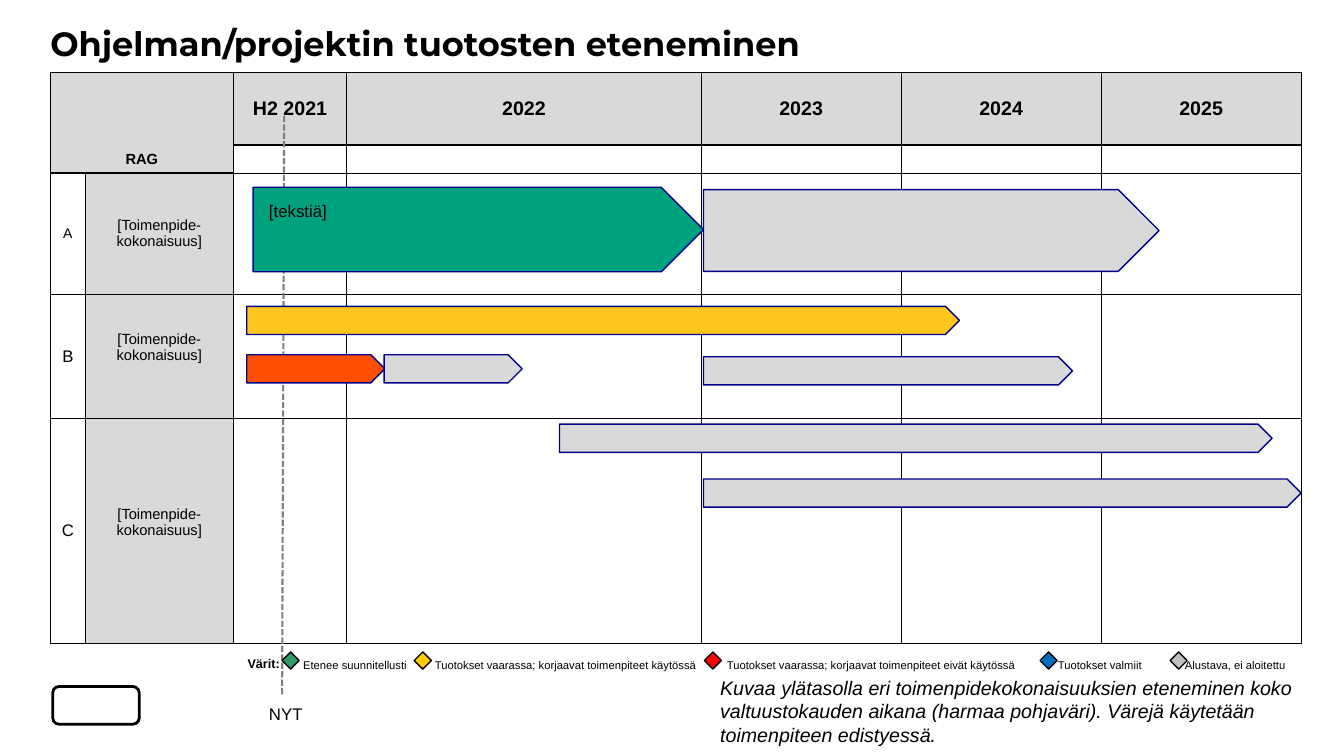
from dataclasses import dataclass

from lxml import etree
from pptx import Presentation
from pptx.dml.color import RGBColor
from pptx.enum.dml import MSO_LINE
from pptx.enum.shapes import MSO_CONNECTOR, MSO_SHAPE
from pptx.enum.text import MSO_ANCHOR, PP_ALIGN
from pptx.oxml.ns import qn
from pptx.util import Cm, Pt

LEFT, CENTER = PP_ALIGN.LEFT, PP_ALIGN.CENTER
TOP, MIDDLE, BOTTOM = MSO_ANCHOR.TOP, MSO_ANCHOR.MIDDLE, MSO_ANCHOR.BOTTOM
PENTAGON, DIAMOND = MSO_SHAPE.PENTAGON, MSO_SHAPE.DIAMOND
ROUNDED = MSO_SHAPE.ROUNDED_RECTANGLE
STRAIGHT = MSO_CONNECTOR.STRAIGHT
DASHED = MSO_LINE.SQUARE_DOT


@dataclass(frozen=True)
class Theme:
    title_font: str = "Montserrat"
    body_font: str = "Arial"
    ink: str = "000000"
    paper: str = "FFFFFF"
    grey: str = "D9D9D9"
    bar_line: str = "00008D"
    now_line: str = "808080"
    green: str = "00A17D"
    yellow: str = "FFC61E"
    red: str = "FD4F00"
    title: float = 24
    heading: float = 14
    body: float = 12
    small: float = 10.5
    row_a: float = 10
    legend_head: float = 9
    legend: float = 8


THEME = Theme()
BAR_HEIGHT = 0.71
COLUMNS = [0.88, 3.73, 2.86, 8.93, 5.04, 5.04, 5.04]
ROWS = [1.83, 0.65, 3.05, 3.14, 5.66]
PERIODS = ["H2 2021", "2022", "2023", "2024", "2025"]
ACTIONS = "[Toimenpide-kokonaisuus]"
# Row letter, its size, and the bottom margin of the neighbouring cell
GROUPS = [("A", THEME.row_a, 0.13), ("B", THEME.body, 0.58), ("C", THEME.body, 0.58)]
# Left, top, width, height, colour
BARS = [
    (6.38, 4.72, 11.35, 2.13, THEME.green),
    (17.73, 4.78, 11.48, 2.06, THEME.grey),
    (6.22, 7.72, 17.96, BAR_HEIGHT, THEME.yellow),
    (14.1, 10.69, 17.96, BAR_HEIGHT, THEME.grey),
    (6.22, 8.94, 3.48, BAR_HEIGHT, THEME.red),
    (9.68, 8.94, 3.48, BAR_HEIGHT, THEME.grey),
    (17.73, 8.99, 9.3, BAR_HEIGHT, THEME.grey),
    (17.73, 12.07, 15.06, BAR_HEIGHT, THEME.grey),
]
# Diamond left, label left, label width, colour, label
LEGEND = [
    (7.11, 7.64, 2.8, "339966", "Etenee suunnitellusti"),
    (10.44, 10.96, 6.8, "FFCC00", "Tuotokset vaarassa; korjaavat toimenpiteet käytössä"),
    (17.75, 18.32, 7.6, "FF0000", "Tuotokset vaarassa; korjaavat toimenpiteet eivät käytössä"),
    (26.21, 26.66, 2.5, "0070C0", "Tuotokset valmiit"),
    (29.49, 29.86, 3, "BFBFBF", "Alustava, ei aloitettu"),
]


def rgb(code):
    return RGBColor.from_string(code)


def write(frame, text, size, font=THEME.body_font, bold=False, italic=False,
          align=LEFT, spacing=None):
    para = frame.paragraphs[0]
    para.alignment = align
    if spacing:
        para.line_spacing = spacing
    span = para.add_run()
    span.text = text
    span.font.name, span.font.size = font, Pt(size)
    span.font.bold, span.font.italic = bold, italic
    span.font.color.rgb = rgb(THEME.ink)


def add_text(page, left, top, width, height, text, size,
             margins=(0.25, 0.13), anchor=TOP, **style):
    box = page.shapes.add_textbox(Cm(left), Cm(top), Cm(width), Cm(height))
    frame = box.text_frame
    frame.word_wrap = True
    frame.vertical_anchor = anchor
    frame.margin_left = frame.margin_right = Cm(margins[0])
    frame.margin_top = frame.margin_bottom = Cm(margins[1])
    write(frame, text, size, **style)


def add_block(page, kind, left, top, width, height, fill, line, weight=1):
    block = page.shapes.add_shape(kind, Cm(left), Cm(top), Cm(width), Cm(height))
    block.shadow.inherit = False
    block.fill.solid()
    block.fill.fore_color.rgb = rgb(fill)
    block.line.color.rgb = rgb(line)
    block.line.width = Pt(weight)


def set_borders(cell, row, column):
    """Draw the four sides; the edge below the heading is heavier."""
    properties = cell._tc.get_or_add_tcPr()
    sides = {"lnL": None, "lnR": None, "lnT": row, "lnB": row + 1}
    for position, (side, edge) in enumerate(sides.items()):
        heavy = edge == 1 or (edge == 2 and column < 2)
        line = etree.Element(qn(f"a:{side}"), w=str(Pt(2 if heavy else 1)))
        fill = etree.SubElement(line, qn("a:solidFill"))
        etree.SubElement(fill, qn("a:srgbClr"), val=THEME.ink)
        properties.insert(position, line)


def fill_cell(cell, text, size, bottom=0.13, anchor=MIDDLE, bold=False):
    cell.vertical_anchor = anchor
    cell.margin_bottom = Cm(bottom)
    write(cell.text_frame, text, size, bold=bold, align=CENTER)


def add_schedule(page):
    holder = page.shapes.add_table(len(ROWS), len(COLUMNS), Cm(1.27), Cm(1.83),
                                   Cm(sum(COLUMNS)), Cm(sum(ROWS)))
    table = holder.table
    table.first_row = table.horz_banding = False
    for column, width in zip(table.columns, COLUMNS):
        column.width = Cm(width)
    for row, height in zip(table.rows, ROWS):
        row.height = Cm(height)

    # Texts
    table.cell(0, 0).merge(table.cell(1, 1))
    fill_cell(table.cell(0, 0), "RAG", THEME.small, anchor=BOTTOM, bold=True)
    for column, period in enumerate(PERIODS, start=2):
        fill_cell(table.cell(0, column), period, THEME.heading, bold=True)
    for row, (letter, size, bottom) in enumerate(GROUPS, start=2):
        fill_cell(table.cell(row, 0), letter, size)
        fill_cell(table.cell(row, 1), ACTIONS, THEME.small, bottom)

    # Fills, borders and the type size of empty cells
    for row in range(len(ROWS)):
        for column in range(len(COLUMNS)):
            cell = table.cell(row, column)
            if row == 0 or column == 1 or cell.is_spanned:
                cell.fill.solid()
                cell.fill.fore_color.rgb = rgb(THEME.grey)
            else:
                cell.fill.background()
            set_borders(cell, row, column)
            if not cell.text:
                para = cell.text_frame.paragraphs[0]
                etree.SubElement(para._p, qn("a:endParaRPr"), sz=str(THEME.legend * 100))


def add_now_marker(page):
    line = page.shapes.add_connector(STRAIGHT, Cm(7.16), Cm(2.92), Cm(7.11), Cm(17.5))
    line.line.color.rgb = rgb(THEME.now_line)
    line.line.width = Pt(1.5)
    line.line.dash_style = DASHED
    etree.SubElement(line._element.spPr, qn("a:effectLst"))
    add_text(page, 6.53, 17.6, 2.01, 0.76, "NYT", THEME.body)


def add_legend(page):
    style = {"margins": (0, 0), "anchor": MIDDLE}
    add_text(page, 6.24, 16.4, 0.95, 0.66, "Värit:", THEME.legend_head, bold=True, **style)
    for diamond_left, left, width, colour, label in LEGEND:
        add_block(page, DIAMOND, diamond_left, 16.43, 0.43, 0.43, colour, THEME.ink)
        add_text(page, left, 16.42, width, 0.66, label, THEME.legend, **style)


def main():
    deck = Presentation()
    deck.slide_width, deck.slide_height = Cm(33.87), Cm(19.05)
    page = deck.slides.add_slide(deck.slide_layouts[6])

    # Emblem and title
    add_block(page, ROUNDED, 1.33, 17.3, 2.18, 0.95, THEME.paper, THEME.ink, weight=2)
    add_text(page, 1.27, 0.69, 31.52, 0.91, "Ohjelman/projektin tuotosten eteneminen",
             THEME.title, margins=(0, 0), font=THEME.title_font, bold=True, spacing=0.9)

    # Schedule with its bars
    add_schedule(page)
    add_now_marker(page)
    add_legend(page)
    for left, top, width, height, colour in BARS:
        add_block(page, PENTAGON, left, top, width, height, colour, THEME.bar_line)
    add_text(page, 6.53, 4.93, 3.15, 0.76, "[tekstiä]", THEME.body)

    # Guidance
    add_text(page, 17.9, 16.89, 15.9, 2.06,
             "Kuvaa ylätasolla eri toimenpidekokonaisuuksien eteneminen koko "
             "valtuustokauden aikana (harmaa pohjaväri). Värejä käytetään "
             "toimenpiteen edistyessä.", THEME.heading, italic=True)
    deck.save("out.pptx")


if __name__ == "__main__":
    main()
